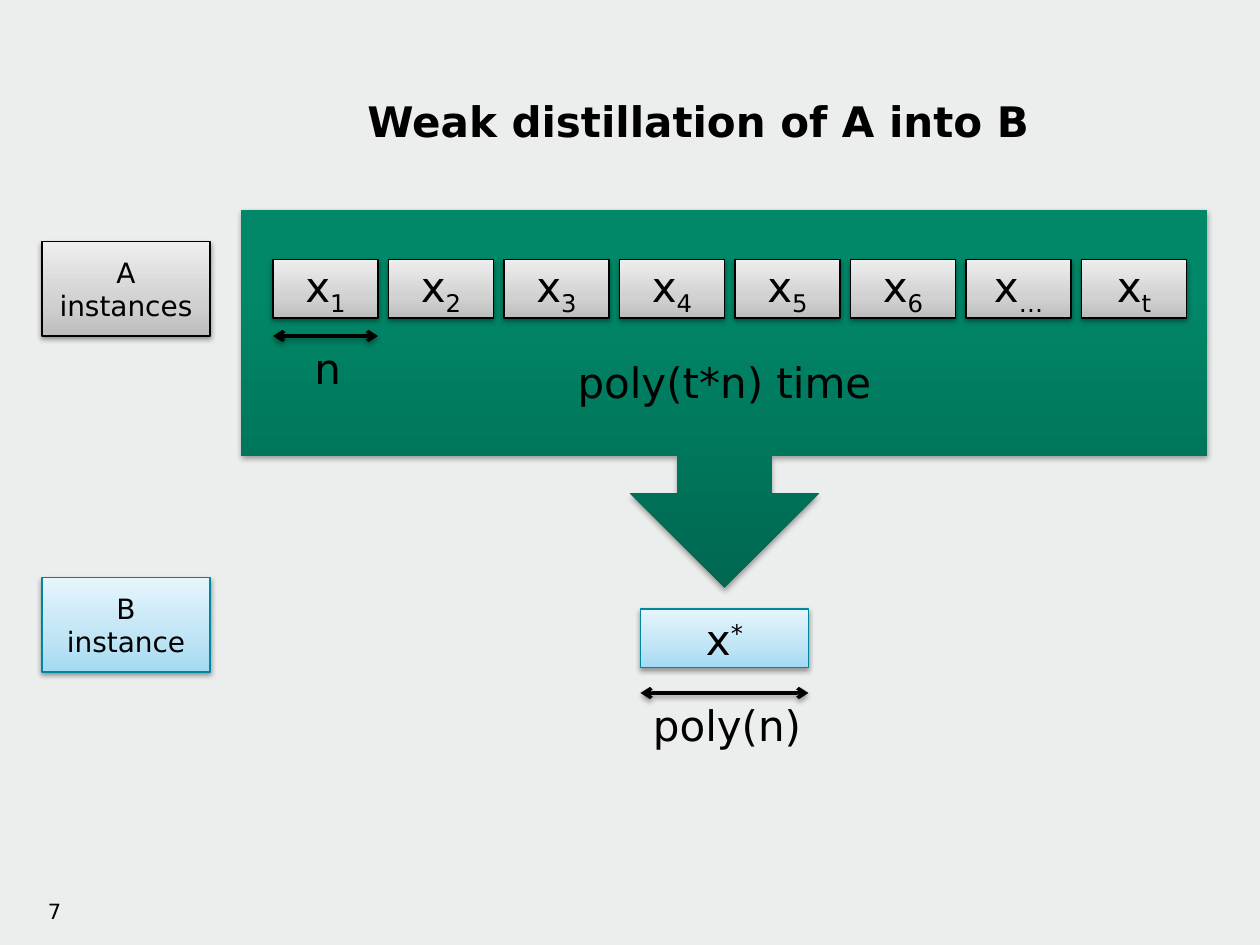
import pptx
import pptx.util
import pptx.dml.color
import pptx.enum.shapes
import pptx.enum.text
import pptx.oxml.ns
from lxml import etree

PX = 7620
FONT = "DejaVu Sans"
GREEN = [(0, "006850"), (80, "008868"), (100, "008868")]
GREY = [(0, "BDBDBD"), (35, "D1D1D1"), (100, "EEEEEE")]
BLUE = [(0, "A2DAF2"), (35, "BFE4F5"), (100, "E6F5FC")]
SHAPE = pptx.enum.shapes.MSO_SHAPE
ALIGN = pptx.enum.text.PP_ALIGN
ANCHOR = pptx.enum.text.MSO_ANCHOR


def px(*lengths):
    """Turn px lengths into EMU."""
    return [pptx.util.Emu(length * PX) for length in lengths]


def rgb(value):
    """Return the colour of a hex string."""
    return pptx.dml.color.RGBColor.from_string(value)


def child(parent, tag, **attrs):
    """Add a drawing element to a parent."""
    node = etree.SubElement(parent, pptx.oxml.ns.qn("a:" + tag))
    for name, value in attrs.items():
        node.set(name, str(value))
    return node


def add_shadow(effects, alpha=38, dist=1.6):
    """Put a soft downward shadow into an effect list."""
    node = child(effects, "outerShdw", blurRad=pptx.util.Pt(3.1), dist=pptx.util.Pt(dist),
                 dir=5400000, rotWithShape=0)
    child(child(node, "srgbClr", val="000000"), "alpha", val=alpha * 1000)


def fill_gradient(sp, stops):
    """Fill a shape with a gradient that runs from bottom to top."""
    sp.fill.gradient()
    sp.fill.gradient_angle = 90
    gs_list = sp._element.spPr.find(".//" + pptx.oxml.ns.qn("a:gsLst"))
    for stop in list(gs_list):
        gs_list.remove(stop)
    for position, color in stops:
        child(child(gs_list, "gs", pos=position * 1000), "srgbClr", val=color)


def write(sp, lines, size, align=ALIGN.CENTER, anchor=ANCHOR.MIDDLE, bold=False):
    """Write paragraphs, each a list of (text, baseline percent) runs."""
    tf = sp.text_frame
    tf.word_wrap = True
    tf.vertical_anchor = anchor
    for i, runs in enumerate(lines):
        p = tf.add_paragraph() if i else tf.paragraphs[0]
        p.alignment = align
        p.font.name = FONT
        p.font.size = pptx.util.Pt(size)
        p.font.bold = bold
        p.font.color.rgb = rgb("000000")
        for text, baseline in runs:
            r = p.add_run()
            r.text = text
            if baseline:
                r._r.get_or_add_rPr().set("baseline", str(baseline * 1000))


def add_gradient_shape(s, kind, box, stops, line=None, **shadow):
    """Add a shape with a gradient fill and a shadow."""
    sp = s.shapes.add_shape(kind, *px(*box))
    fill_gradient(sp, stops)
    if line:
        sp.line.color.rgb = rgb(line)
        sp.line.width = pptx.util.Pt(0.75)
    else:
        sp.line.fill.background()
    sp.shadow.inherit = False
    add_shadow(sp._element.spPr.find(pptx.oxml.ns.qn("a:effectLst")), **shadow)
    return sp


def add_box(s, box, stops, line, lines, size=24):
    """Add an outlined box with centred text."""
    write(add_gradient_shape(s, SHAPE.RECTANGLE, box, stops, line), lines, size)


def add_callout(s, box, text):
    """Add the down arrow callout with text low in its body."""
    sp = add_gradient_shape(s, SHAPE.DOWN_ARROW_CALLOUT, box, GREEN, alpha=35, dist=1.8)
    sp.text_frame.margin_top = px(100)[0]
    write(sp, [[(text, 0)]], 24)


def add_measure(s, left, right, y, label, label_left, label_width):
    """Add a grouped double arrow with its label below."""
    group = s.shapes.add_group_shape()
    line = group.shapes.add_connector(pptx.enum.shapes.MSO_CONNECTOR.STRAIGHT,
                                      *px(left, y, right, y))
    line.line.color.rgb = rgb("000000")
    line.line.width = pptx.util.Pt(2)
    ln = line.line._get_or_add_ln()
    child(ln, "headEnd", type="arrow")
    child(ln, "tailEnd", type="arrow")
    add_shadow(child(line._element.spPr, "effectLst"))
    sp = group.shapes.add_textbox(*px(label_left, y, label_width, 60))
    write(sp, [[(label, 0)]], 24)


def add_title(s, text):
    """Place and format the title."""
    sp = s.shapes.title
    sp.left, sp.top, sp.width, sp.height = px(180, 40, 970, 150)
    write(sp, [[(text, 0)]], 24, bold=True)


def add_slide_number(s, text):
    """Add the slide number at the bottom left."""
    sp = s.shapes.add_textbox(*px(0, 850, 70, 50))
    write(sp, [[(text, 0)]], 12, ALIGN.RIGHT, ANCHOR.TOP)


def main():
    """Build the slide."""
    prs = pptx.Presentation()
    prs.slide_width, prs.slide_height = px(1200, 900)
    s = prs.slides.add_slide(prs.slide_layouts[5])
    s.background.fill.solid()
    s.background.fill.fore_color.rgb = rgb("ECEDED")
    add_slide_number(s, "7")
    add_callout(s, (230, 200, 920, 360), "poly(t*n) time")
    add_title(s, "Weak distillation of A into B")
    for i, index in enumerate("123456…t"):
        add_box(s, (260 + 110 * i, 247, 100, 56), GREY, "000000", [[("x", 0), (index, -25)]])
    add_box(s, (40, 230, 160, 90), GREY, "000000", [[("A", 0)], [("instances", 0)]], 16)
    add_box(s, (610, 580, 160, 56), BLUE, "00879F", [[("x", 0), ("*", 30)]])
    add_box(s, (40, 550, 160, 90), BLUE, "00879F", [[("B", 0)], [("instance", 0)]], 16)
    add_measure(s, 260, 360, 320, "n", 277, 70)
    add_measure(s, 610, 770, 660, "poly(n)", 605, 175)
    prs.save("out.pptx")


if __name__ == "__main__":
    main()
